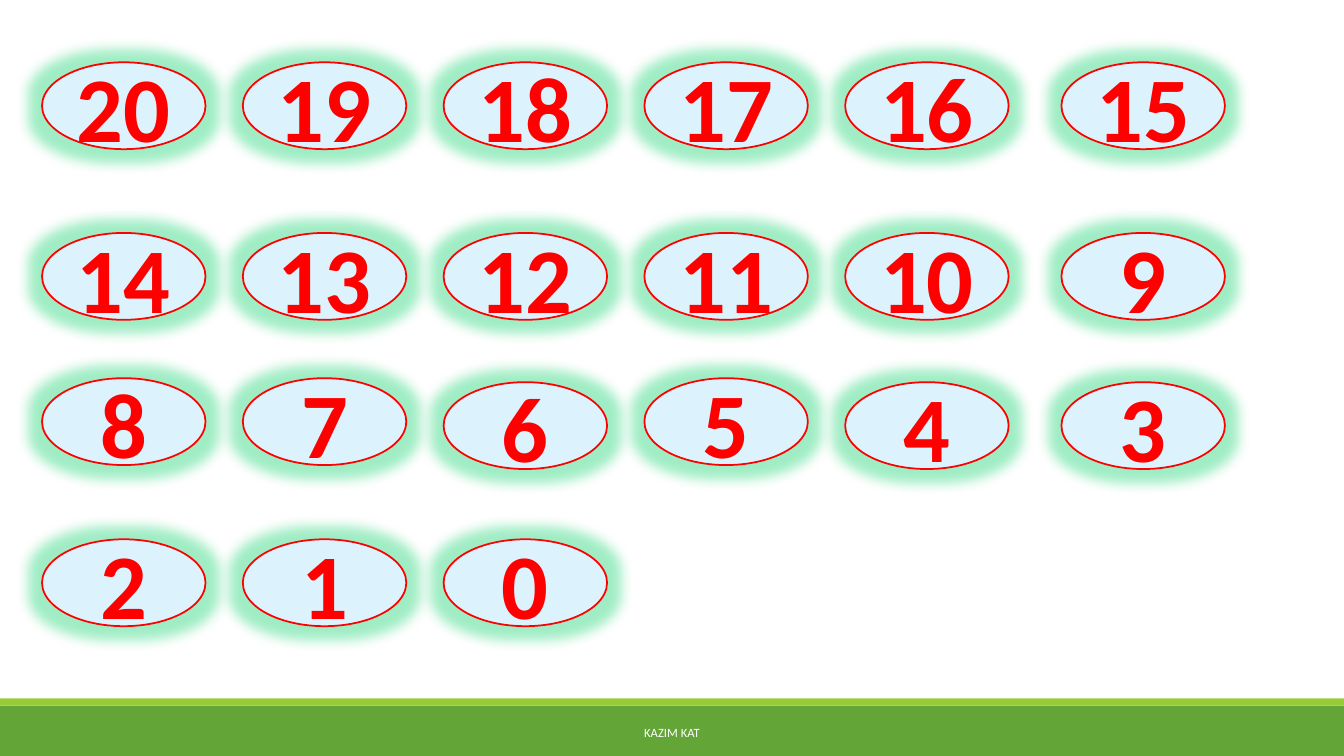
import pptx
import pptx.util
import pptx.oxml
import pptx.dml.color
import pptx.enum.shapes
import pptx.enum.text
from pptx.util import Cm

RGBColor = pptx.dml.color.RGBColor
RED = RGBColor(0xFF, 0x00, 0x00)
PALE_BLUE = RGBColor(0xDC, 0xF3, 0xFE)
GREEN = RGBColor(0x63, 0xA5, 0x37)
LIME = RGBColor(0x99, 0xCB, 0x38)
WHITE = RGBColor(0xFF, 0xFF, 0xFF)
GLOW_GREEN = RGBColor(0x11, 0xD4, 0x6E)
SHAPES = pptx.enum.shapes.MSO_SHAPE
GLOW = (
    '<a:glow xmlns:a="http://schemas.openxmlformats.org/drawingml/2006/main" rad="228600">'
    f'<a:srgbClr val="{GLOW_GREEN}"><a:alpha val="40000"/></a:srgbClr></a:glow>'
)


def write(holder, text, size, color, bold=False, wrap=True):
    frame = holder.text_frame
    frame.word_wrap = wrap
    frame.vertical_anchor = pptx.enum.text.MSO_ANCHOR.MIDDLE
    paragraph = frame.paragraphs[0]
    paragraph.alignment = pptx.enum.text.PP_ALIGN.CENTER
    run = paragraph.add_run()
    run.text = text
    run.font.name = "Calibri"
    run.font.size = pptx.util.Pt(size)
    run.font.bold = bold
    run.font.color.rgb = color


deck = pptx.Presentation()
deck.slide_width = Cm(33.87)
deck.slide_height = Cm(19.05)
slide = deck.slides.add_slide(deck.slide_layouts[6])

for top, height, color in [(17.78, 1.27, GREEN), (17.6, 0.18, LIME)]:
    band = slide.shapes.add_shape(SHAPES.RECTANGLE, 0, Cm(top), deck.slide_width, Cm(height))
    band.shadow.inherit = False
    band.fill.solid()
    band.fill.fore_color.rgb = color
    band.line.fill.background()

author = slide.shapes.add_textbox(Cm(10.24), Cm(17.94), Cm(13.39), Cm(1.02))
write(author, "KAZIM KAT", size=9, color=WHITE)

column_lefts = [1.06 + 5.06 * column for column in range(5)] + [26.75]
row_tops = [1.57, 5.87, 9.53, 13.59]
lowered_numbers = {6, 4, 3}

for position, number in enumerate(range(20, -1, -1)):
    row, column = divmod(position, len(column_lefts))
    top = row_tops[row] + (0.1 if number in lowered_numbers else 0)
    bubble = slide.shapes.add_shape(
        SHAPES.OVAL, Cm(column_lefts[column]), Cm(top), Cm(4.12), Cm(2.19))
    bubble.fill.solid()
    bubble.fill.fore_color.rgb = PALE_BLUE
    bubble.line.color.rgb = RED
    bubble.line.width = pptx.util.Pt(1.25)
    bubble.shadow.inherit = False
    effects = bubble._element.spPr.find(pptx.oxml.ns.qn("a:effectLst"))
    effects.append(pptx.oxml.parse_xml(GLOW))
    write(bubble, str(number), size=66, color=RED, bold=True, wrap=False)

deck.save("out.pptx")
